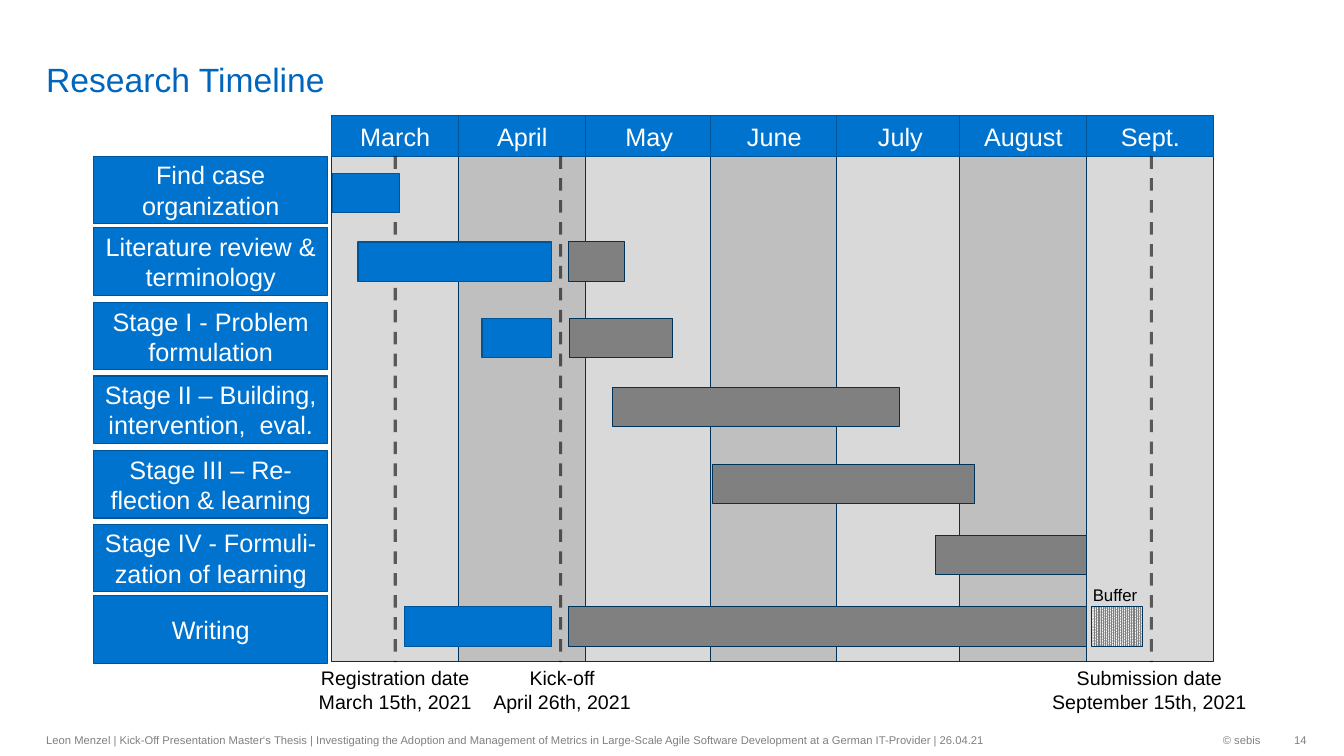
from lxml import etree
from pptx import Presentation
from pptx import util as u
from pptx.dml.color import RGBColor
from pptx.enum import dml, shapes, text
from pptx.oxml import ns

PX = 9144
FONT = "Arial"
COLORS = {
    "title": "0065BD", "done": "0073CF", "done_line": "005599",
    "planned": "808080", "dark_line": "003359", "buffer": "7F7F7F",
    "light": "D9D9D9", "shade": "BFBFBF", "footer": "808080",
    "white": "FFFFFF", "black": "000000",
}
MONTHS = [("March", 0), ("April", 126), ("May", 252), ("June", 376),
          ("July", 501), ("August", 623), ("Sept.", 749)]
MONTH_WIDTH, HEADER_HEIGHT = 126, 40
LABEL_WIDTH, LABEL_HEIGHT, BAR_HEIGHT = 232, 67, 39
TASKS = [
    ("Find case organization", 40, 57, [("done", 1, 66)]),
    ("Literature review & terminology", 111, 125,
     [("done", 26, 192), ("planned", 235, 55)]),
    ("Stage I - Problem formulation", 185, 201,
     [("done", 149, 69), ("planned", 236, 102)]),
    ("Stage II – Building, intervention,  eval.", 258, 269,
     [("planned", 278, 285)]),
    ("Stage III – Re-flection & learning", 332, 346, [("planned", 378, 260)]),
    ("Stage IV - Formuli-zation of learning", 405, 416,
     [("planned", 599, 150)]),
    ("Writing", 476, 487,
     [("done", 72, 146), ("planned", 235, 514), ("buffer", 754, 50)]),
]
MILESTONES = [
    ("Registration date", "March 15th, 2021", 63, -62, 250),
    ("Kick-off", "April 26th, 2021", 227, 149, 159),
    ("Submission date", "September 15th, 2021", 813, 686, 250),
]


def rgb(name):
    return RGBColor.from_string(COLORS[name])


def px(*lengths):
    return [u.Emu(length * PX) for length in lengths]


def write(frame, lines, size, color, align, anchor):
    frame.word_wrap = True
    frame.vertical_anchor = anchor
    frame.text = "\n".join(lines)
    for paragraph in frame.paragraphs:
        paragraph.alignment = align
        paragraph.font.name = FONT
        paragraph.font.size = u.Pt(size)
        paragraph.font.color.rgb = rgb(color)


def add_text(slide, box, lines, size, color, align=text.PP_ALIGN.LEFT,
             anchor=text.MSO_ANCHOR.TOP):
    frame = slide.shapes.add_textbox(*px(*box)).text_frame
    write(frame, lines, size, color, align, anchor)
    return frame


def add_block(slide, box, fill, label=None):
    block = slide.shapes.add_shape(shapes.MSO_SHAPE.RECTANGLE, *px(*box))
    block.shadow.inherit = False
    if fill == "buffer":
        block.fill.patterned()
        block.fill.pattern = dml.MSO_PATTERN.PERCENT_90
        block.fill.fore_color.rgb = rgb("buffer")
        block.fill.back_color.rgb = rgb("white")
    else:
        block.fill.solid()
        block.fill.fore_color.rgb = rgb(fill)
    done = fill == "done"
    block.line.color.rgb = rgb("done_line" if done else "dark_line")
    block.line.width = u.Pt(0.85 if done else 0.75)
    if label:
        write(block.text_frame, [label], 18, "white",
              text.PP_ALIGN.CENTER, text.MSO_ANCHOR.MIDDLE)


def add_months(slide, left, top, height):
    for index, (month, offset) in enumerate(MONTHS):
        shade = "shade" if index % 2 else "light"
        add_block(slide, (left + offset, top + HEADER_HEIGHT, MONTH_WIDTH,
                          height - HEADER_HEIGHT), shade)
        add_block(slide, (left + offset, top, MONTH_WIDTH, HEADER_HEIGHT),
                  "done", month)


def add_milestones(slide, left, top, height):
    bottom = top + height
    for event, date, offset, caption, width in MILESTONES:
        x = left + offset
        marker = slide.shapes.add_connector(
            shapes.MSO_CONNECTOR.STRAIGHT,
            *px(x, top + HEADER_HEIGHT, x, bottom + 1))
        marker.line.width = u.Pt(2.25)
        marker.line.color.rgb = rgb("black")
        marker.line.dash_style = dml.MSO_LINE.DASH
        properties = marker.element.spPr
        color = properties.find(".//" + ns.qn("a:srgbClr"))
        etree.SubElement(color, ns.qn("a:alpha"), val="59000")
        etree.SubElement(properties, ns.qn("a:effectLst"))
        add_text(slide, (left + caption, bottom, width, 58), [event, date],
                 14, "black", text.PP_ALIGN.CENTER)


def add_tasks(slide, left, top):
    for task, label_top, bar_top, bars in TASKS:
        add_block(slide, (left - LABEL_WIDTH - 4, top + label_top,
                          LABEL_WIDTH, LABEL_HEIGHT), "done", task)
        for status, start, width in bars:
            add_block(slide, (left + start, top + bar_top, width, BAR_HEIGHT),
                      status)
            if status == "buffer":
                add_text(slide, (left + start - 9, top + bar_top - 27, 72, 30),
                         ["Buffer"], 12, "black")


def add_timeline(slide, left, top, height):
    add_months(slide, left, top, height)
    add_milestones(slide, left, top, height)
    add_tasks(slide, left, top)


def add_title(slide, box):
    frame = add_text(slide, box, ["Research Timeline"], 24, "title",
                     anchor=text.MSO_ANCHOR.BOTTOM)
    frame.margin_top = frame.margin_bottom = 0


def add_footer(slide, left, top, height):
    middle, right = text.MSO_ANCHOR.MIDDLE, text.PP_ALIGN.RIGHT
    add_text(slide, (left, top, 990, height), [
        "Leon Menzel | Kick-Off Presentation Master‘s Thesis | "
        "Investigating the Adoption and Management of Metrics in Large-Scale "
        "Agile Software Development at a German IT-Provider | 26.04.21"],
        8, "footer", anchor=middle)
    add_text(slide, (left + 990, top, 234, height), ["© sebis"], 8, "footer",
             right, middle)
    page = add_text(slide, (left + 1224, top, 36, height), ["14"], 8,
                    "footer", right, middle)
    page.margin_right = 0


def main():
    deck = Presentation()
    deck.slide_width, deck.slide_height = px(1333, 750)
    slide = deck.slides.add_slide(deck.slide_layouts[6])
    add_title(slide, (36, 19, 1158, 79))
    add_timeline(slide, 329, 115, 541)
    add_footer(slide, 36, 718, 32)
    deck.save("out.pptx")


if __name__ == "__main__":
    main()
